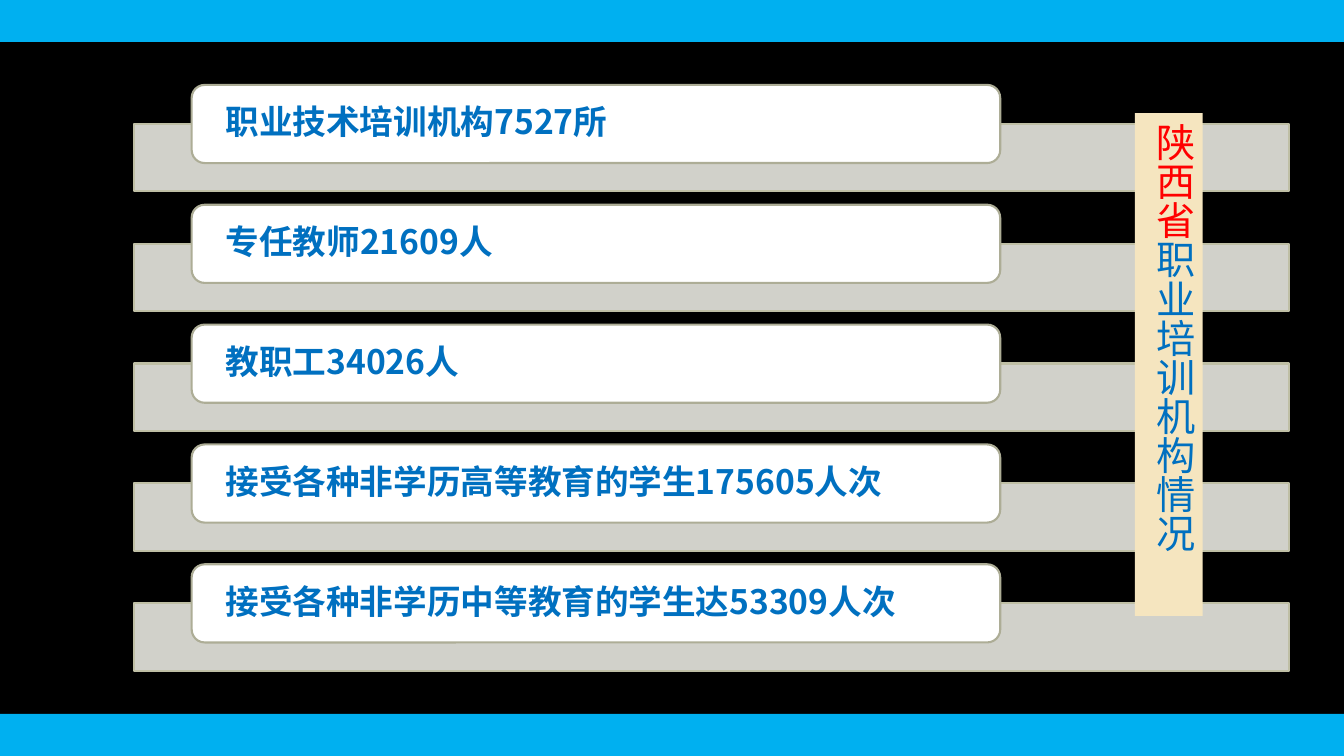
from lxml.etree import SubElement
from pptx import Presentation
from pptx.dml.color import RGBColor
from pptx.enum.shapes import MSO_SHAPE
from pptx.enum.text import MSO_ANCHOR, MSO_AUTO_SIZE, PP_ALIGN
from pptx.oxml.ns import qn
from pptx.util import Cm, Pt

WIDE, HIGH = 33.87, 19.05
FONT = "Noto Sans CJK SC"
BLUE = "0070C0"
FACTS = [
    "职业技术培训机构7527所",
    "专任教师21609人",
    "教职工34026人",
    "接受各种非学历高等教育的学生175605人次",
    "接受各种非学历中等教育的学生达53309人次",
]


def paint(fill, color):
    """Fill with one solid colour."""
    fill.solid()
    fill.fore_color.rgb = RGBColor.from_string(color)


def add_box(slide, kind, box, color, edge=None):
    """Add a flat shape at a box given in centimetres."""
    shape = slide.shapes.add_shape(kind, *[Cm(x) for x in box])
    shape.shadow.inherit = False
    paint(shape.fill, color)
    if edge:
        paint(shape.line.fill, edge)
        shape.line.width = Pt(1.5)
    else:
        shape.line.fill.background()
    return shape


def add_run(para, text, size, color, bold=False):
    """Add a run with its font for Latin and East Asian text."""
    run = para.add_run()
    run.text = text
    font = run.font
    font.size, font.bold, font.name = Pt(size), bold, FONT
    font.color.rgb = RGBColor.from_string(color)
    SubElement(run._r.get_or_add_rPr(), qn("a:ea"), typeface=FONT)


def add_bands(slide, high):
    """Draw the bands along the top and bottom edges."""
    for top in (0, HIGH - high):
        add_box(slide, MSO_SHAPE.RECTANGLE, (0, top, WIDE, high), "00B0F0")


def add_fact(slide, left, top, wide, text):
    """Draw a pale bar with a white card overlapping its upper edge."""
    bar = add_box(slide, MSO_SHAPE.RECTANGLE,
                  (left, top + 0.98, wide, 1.7), "E8E8E1", "BFBFA5")
    tone = bar._element.spPr.find(qn("a:solidFill"))[0]
    SubElement(tone, qn("a:alpha"), val="90000")
    card = add_box(slide, MSO_SHAPE.ROUNDED_RECTANGLE,
                   (left + 1.45, top, wide * 0.7, 1.97), "FFFFFF", "ADAD96")
    frame = card.text_frame
    frame.word_wrap = True
    frame.vertical_anchor = MSO_ANCHOR.MIDDLE
    frame.margin_left = frame.margin_right = Cm(0.76)
    frame.margin_top = frame.margin_bottom = 0
    para = frame.paragraphs[0]
    para.alignment = PP_ALIGN.LEFT
    para.line_spacing = 0.9
    para.space_after = Pt(8.4)
    add_run(para, text, 24, BLUE, True)


def add_facts(slide, left, top, wide, step):
    """Stack the facts at an equal step."""
    for i, text in enumerate(FACTS):
        add_fact(slide, left, top + i * step, wide, text)


def add_title(slide, box):
    """Draw the vertical title strip."""
    strip = add_box(slide, MSO_SHAPE.RECTANGLE, box, "F5E5BF")
    frame = strip.text_frame
    frame.word_wrap = True
    frame.auto_size = MSO_AUTO_SIZE.SHAPE_TO_FIT_TEXT
    frame.vertical_anchor = MSO_ANCHOR.TOP
    frame._txBody.bodyPr.set("vert", "eaVert")
    para = frame.paragraphs[0]
    para.alignment = PP_ALIGN.JUSTIFY
    add_run(para, "陕西省", 28, "FF0000")
    add_run(para, "职业培训机构情况", 28, BLUE)


def main():
    """Build and save the slide."""
    deck = Presentation()
    deck.slide_width, deck.slide_height = Cm(WIDE), Cm(HIGH)
    slide = deck.slides.add_slide(deck.slide_layouts[6])
    paint(slide.background.fill, "000000")
    add_bands(slide, 1.06)
    add_facts(slide, 3.38, 2.14, 29.11, 3.02)
    add_title(slide, (28.6, 2.85, 1.71, 12.67))
    deck.save("out.pptx")


if __name__ == "__main__":
    main()
